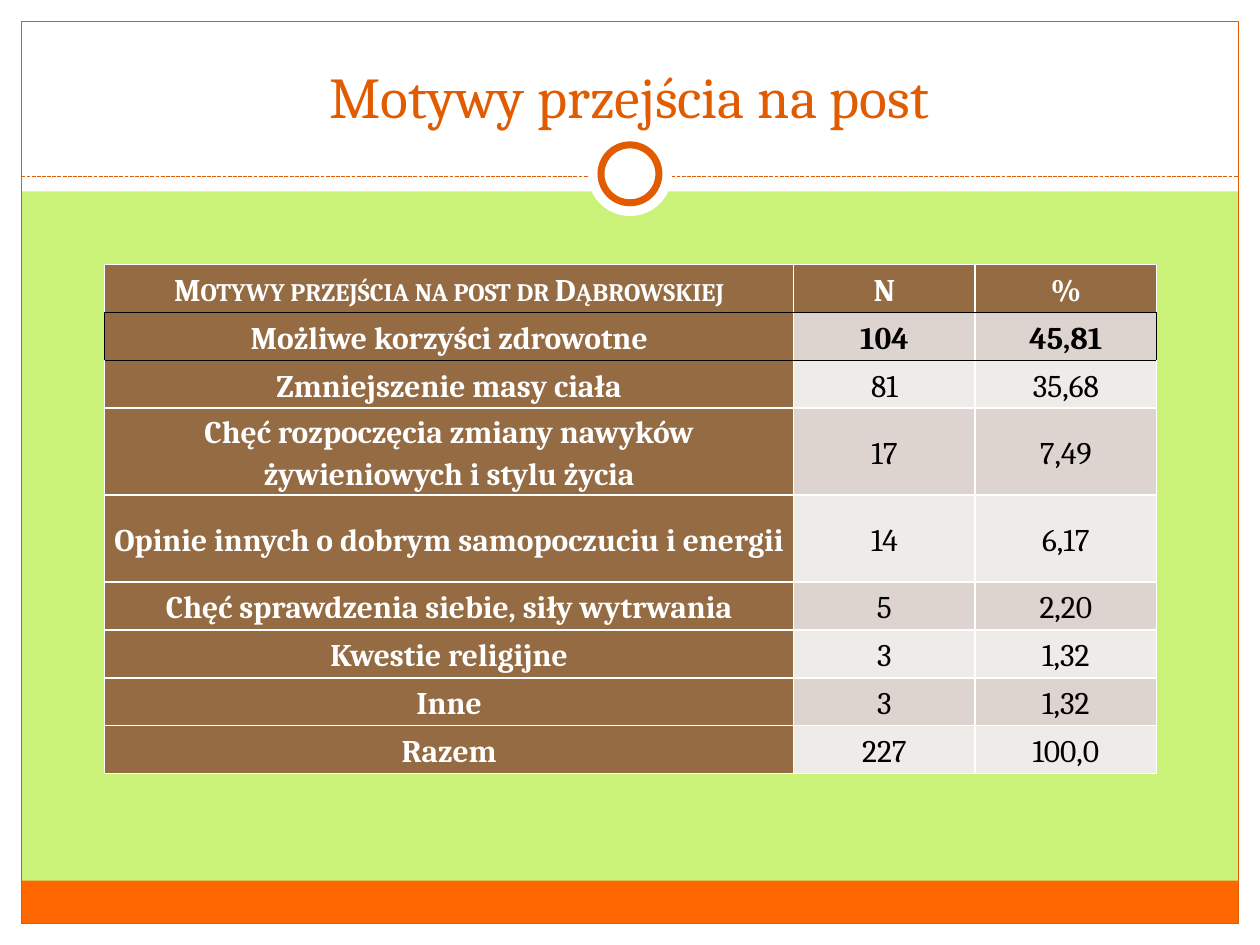
from lxml import etree
from pptx import Presentation
from pptx.dml.color import RGBColor
from pptx.enum.dml import MSO_LINE
from pptx.enum.shapes import MSO_CONNECTOR, MSO_SHAPE
from pptx.enum.text import MSO_ANCHOR, PP_ALIGN
from pptx.oxml.ns import qn
from pptx.util import Inches, Pt

RECT, OVAL = MSO_SHAPE.RECTANGLE, MSO_SHAPE.OVAL
STRAIGHT, DASH = MSO_CONNECTOR.STRAIGHT, MSO_LINE.SQUARE_DOT
CENTER, MIDDLE, BOTTOM = PP_ALIGN.CENTER, MSO_ANCHOR.MIDDLE, MSO_ANCHOR.BOTTOM

WHITE = RGBColor(0xFF, 0xFF, 0xFF)
BLACK = RGBColor(0, 0, 0)
LIME = RGBColor(0xCA, 0xF2, 0x78)
ORANGE = RGBColor(0xFF, 0x67, 0x00)
RUST = RGBColor(0xE1, 0x5B, 0x00)
BROWN = RGBColor(0x95, 0x6B, 0x43)
BANDS = (RGBColor(0xDD, 0xD4, 0xCF), RGBColor(0xEF, 0xEB, 0xE9))
FONT = "Cambria"

TITLE = "Motywy przejścia na post"
MOTIVES = [
    ("Motywy przejścia na post dr Dąbrowskiej", "N", "%"),
    ("Możliwe korzyści zdrowotne", "104", "45,81"),
    ("Zmniejszenie masy ciała", "81", "35,68"),
    ("Chęć rozpoczęcia zmiany nawyków żywieniowych i stylu życia", "17", "7,49"),
    ("Opinie innych o dobrym samopoczuciu i energii", "14", "6,17"),
    ("Chęć sprawdzenia siebie, siły wytrwania", "5", "2,20"),
    ("Kwestie religijne", "3", "1,32"),
    ("Inne", "3", "1,32"),
    ("Razem", "227", "100,0"),
]
HIGHLIGHT_ROW = 1
TALL_ROWS = (3, 4)
ROW_HEIGHT, TALL_HEIGHT = 0.38, 0.69
COLUMN_WIDTHS = (5.47, 1.44, 1.44)
TABLE_LEFT, TABLE_TOP = 0.83, 2.1

WIDTH, HEIGHT, MARGIN = 10, 7.5, 0.17
HEADER_HEIGHT, FOOTER_HEIGHT = 1.52, 0.34
DIVIDER_Y, RING_Y = 1.4, 1.38
INNER_WIDTH = WIDTH - 2 * MARGIN


def add_panel(slide, kind, box, fill=None, line=None, line_width=0.75):
    panel = slide.shapes.add_shape(kind, *map(Inches, box))
    panel.shadow.inherit = False
    if fill is None:
        panel.fill.background()
    else:
        panel.fill.solid()
        panel.fill.fore_color.rgb = fill
    if line is None:
        panel.line.fill.background()
    else:
        panel.line.color.rgb = line
        panel.line.width = Pt(line_width)


def add_disc(slide, diameter, **style):
    """Add a white disc centred on the divider's medallion."""
    box = (WIDTH / 2 - diameter / 2, RING_Y - diameter / 2, diameter, diameter)
    add_panel(slide, OVAL, box, WHITE, **style)


def add_frame(slide):
    for box in (
        (0, HEIGHT - MARGIN, WIDTH, MARGIN),
        (0, 0, WIDTH, HEADER_HEIGHT),
        (0, 0, MARGIN, HEIGHT),
        (WIDTH - MARGIN, 0, MARGIN, HEIGHT),
    ):
        add_panel(slide, RECT, box, WHITE)
    footer_top = HEIGHT - MARGIN - FOOTER_HEIGHT
    add_panel(slide, RECT, (MARGIN, footer_top, INNER_WIDTH, FOOTER_HEIGHT), ORANGE)
    add_panel(slide, RECT, (MARGIN, MARGIN, INNER_WIDTH, HEIGHT - 2 * MARGIN), line=RUST)

    ends = (MARGIN, DIVIDER_Y, WIDTH - MARGIN, DIVIDER_Y)
    divider = slide.shapes.add_connector(STRAIGHT, *map(Inches, ends))
    divider.line.color.rgb = RUST
    divider.line.width = Pt(0.75)
    divider.line.dash_style = DASH
    etree.SubElement(divider._element.spPr, qn("a:effectLst"))

    add_disc(slide, 0.67)
    add_disc(slide, 0.46, line=RUST, line_width=4)


def add_title(slide):
    title = slide.shapes.title
    title.left, title.top, title.width, title.height = map(Inches, (0.33, 0.25, 9.33, 0.83))
    title.text_frame.text = TITLE
    title.text_frame.vertical_anchor = BOTTOM
    paragraph = title.text_frame.paragraphs[0]
    paragraph.alignment = CENTER
    paragraph.font.name, paragraph.font.size = FONT, Pt(33)
    paragraph.font.color.rgb = RUST
    slide.shapes._spTree.append(title._element)  # in front of the white header


def border_colors(row, column):
    """Map each side to its colour: black outlines the highlighted row."""
    highlighted = row == HIGHLIGHT_ROW
    black_sides = {
        "L": highlighted and column == 0,
        "R": highlighted and column == len(COLUMN_WIDTHS) - 1,
        "T": row in (HIGHLIGHT_ROW, HIGHLIGHT_ROW + 1),
        "B": row in (HIGHLIGHT_ROW - 1, HIGHLIGHT_ROW),
    }
    return {side: BLACK if black else WHITE for side, black in black_sides.items()}


def format_cell(cell, text, row, column):
    heading = row == 0 or column == 0
    properties = cell._tc.get_or_add_tcPr()
    for side, color in border_colors(row, column).items():
        border = etree.SubElement(properties, qn(f"a:ln{side}"), w=str(Pt(1)))
        border_fill = etree.SubElement(border, qn("a:solidFill"))
        etree.SubElement(border_fill, qn("a:srgbClr"), val=str(color))
    cell.fill.solid()
    cell.fill.fore_color.rgb = BROWN if heading else BANDS[(row - 1) % 2]
    cell.vertical_anchor = MIDDLE
    cell.margin_left = cell.margin_right = Inches(0.07)
    cell.margin_top = cell.margin_bottom = 0

    cell.text = text
    paragraph = cell.text_frame.paragraphs[0]
    paragraph.alignment = CENTER
    paragraph.line_spacing = 1.15
    paragraph.font.name, paragraph.font.size = FONT, Pt(18)
    paragraph.font.bold = heading or row == HIGHLIGHT_ROW
    paragraph.font.color.rgb = WHITE if heading else BLACK
    if row == column == 0:
        paragraph.runs[0]._r.get_or_add_rPr().set("cap", "small")


def add_motives_table(slide):
    heights = [TALL_HEIGHT if row in TALL_ROWS else ROW_HEIGHT for row in range(len(MOTIVES))]
    box = (TABLE_LEFT, TABLE_TOP, sum(COLUMN_WIDTHS), sum(heights))
    table = slide.shapes.add_table(len(MOTIVES), len(COLUMN_WIDTHS), *map(Inches, box)).table
    for column, width in zip(table.columns, COLUMN_WIDTHS):
        column.width = Inches(width)
    for row, height in zip(table.rows, heights):
        row.height = Inches(height)
    for row, motive in enumerate(MOTIVES):
        for column, text in enumerate(motive):
            format_cell(table.cell(row, column), text, row, column)


def main():
    deck = Presentation()
    deck.slide_width, deck.slide_height = Inches(WIDTH), Inches(HEIGHT)
    slide = deck.slides.add_slide(deck.slide_layouts[5])
    slide.background.fill.solid()
    slide.background.fill.fore_color.rgb = LIME
    add_frame(slide)
    add_title(slide)
    add_motives_table(slide)
    deck.save("out.pptx")


if __name__ == "__main__":
    main()
